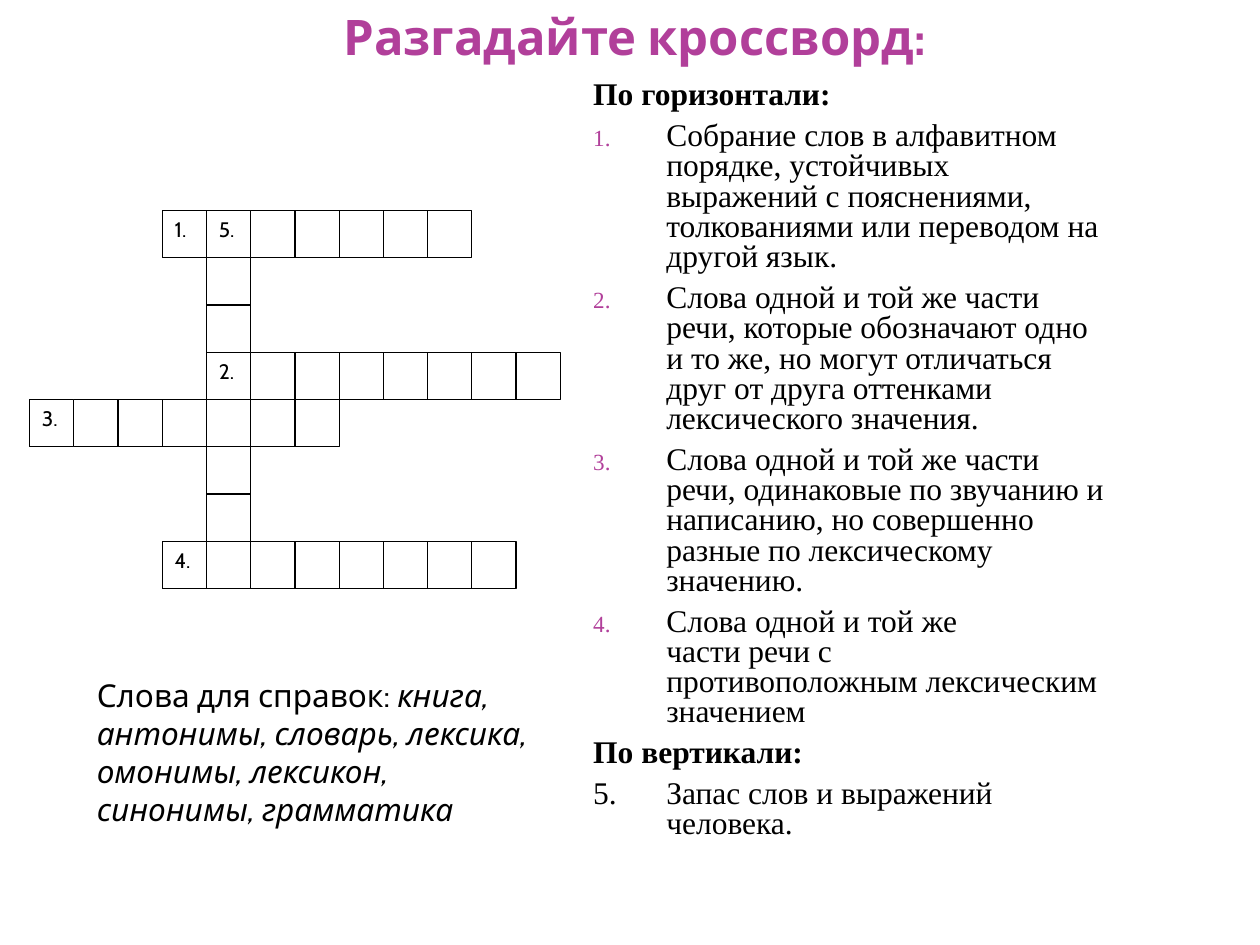
import pptx
import pptx.dml.color
import pptx.enum.shapes
import pptx.enum.text
import pptx.oxml
import pptx.oxml.ns
import pptx.util
from lxml import etree

THEME = {
    "accent": pptx.dml.color.RGBColor.from_string("B13F9A"),
    "ink": pptx.dml.color.RGBColor.from_string("000000"),
    "paper": pptx.dml.color.RGBColor.from_string("FFFFFF"),
    "sans": "Cabin",
    "serif": "Times New Roman",
    "title": 28,
    "text": 18,
    "number": 12,
    "line": 0.75,
}

presentation = pptx.Presentation()
presentation.slide_width = pptx.util.Inches(10)
presentation.slide_height = pptx.util.Inches(7.5)
slide = presentation.slides.add_slide(presentation.slide_layouts[5])

# Lengths are percentages of the slide's width and height
WIDTH = presentation.slide_width / 100
HEIGHT = presentation.slide_height / 100


def frame(left, top, width, height):
    return (round(left * WIDTH), round(top * HEIGHT),
            round(width * WIDTH), round(height * HEIGHT))


def add_run(paragraph, text, size, font, color="ink", bold=False, italic=False):
    run = paragraph.add_run()
    run.text = text
    run.font.size = pptx.util.Pt(THEME[size])
    run.font.name = THEME[font]
    run.font.color.rgb = THEME[color]
    run.font.bold = bold
    run.font.italic = italic


# Title
title = slide.shapes.title
title.left, title.top, title.width, title.height = frame(16.9, 0, 66.9, 7.6)
title.text_frame.vertical_anchor = pptx.enum.text.MSO_ANCHOR.TOP
title.text_frame.word_wrap = True
title.text_frame.auto_size = pptx.enum.text.MSO_AUTO_SIZE.NONE
title_paragraph = title.text_frame.paragraphs[0]
title_paragraph.alignment = pptx.enum.text.PP_ALIGN.CENTER
add_run(title_paragraph, "Разгадайте кроссворд:", "title", "sans", "accent", bold=True)

# Clues: text and kind
clues = [
    ("По горизонтали:", "heading"),
    ("Собрание слов в алфавитном порядке, устойчивых выражений с пояснениями, "
     "толкованиями или переводом на другой язык.", "numbered"),
    ("Слова одной и той же части речи, которые обозначают одно и то же, "
     "но могут отличаться друг от друга оттенками лексического значения.", "numbered"),
    ("Слова одной и той же части речи, одинаковые по звучанию и написанию, "
     "но совершенно разные по лексическому значению.", "numbered"),
    ("Слова одной и той же\nчасти речи с\nпротивоположным лексическим значением",
     "numbered"),
    ("По вертикали:", "heading"),
    ("5.\tЗапас слов и выражений человека.", "plain"),
]
clue_box = slide.shapes.add_textbox(*frame(46.1, 8, 42.5, 84))
clue_box.text_frame.word_wrap = True
for index, (text, kind) in enumerate(clues):
    paragraph = (clue_box.text_frame.add_paragraph() if index
                 else clue_box.text_frame.paragraphs[0])
    properties = paragraph._p.get_or_add_pPr()
    indent = round(5.8 * WIDTH)
    properties.set("marL", str(indent))
    properties.set("indent", str(-indent))
    if kind == "numbered":
        bullet_color = etree.SubElement(properties, pptx.oxml.ns.qn("a:buClr"))
        etree.SubElement(bullet_color, pptx.oxml.ns.qn("a:srgbClr"), val=str(THEME["accent"]))
        etree.SubElement(properties, pptx.oxml.ns.qn("a:buSzPct"), val="73000")
        etree.SubElement(properties, pptx.oxml.ns.qn("a:buAutoNum"), type="arabicPeriod")
    paragraph.line_spacing = 0.8
    paragraph.space_before = pptx.util.Pt(6 if index else 0)
    for number, line in enumerate(text.split("\n")):
        if number:
            paragraph.add_line_break()
        add_run(paragraph, line, "text", "serif", bold=kind == "heading")

# Words to choose from
word_box = slide.shapes.add_textbox(*frame(6.7, 70.9, 37.8, 17.5))
word_box.text_frame.word_wrap = True
word_paragraph = word_box.text_frame.paragraphs[0]
add_run(word_paragraph, "Слова для справок: ", "text", "sans")
add_run(word_paragraph, "книга, антонимы, словарь, лексика, омонимы, лексикон, "
        "синонимы, грамматика", "text", "sans", italic=True)

# Crossword bars: column, row, columns, rows; the vertical word lies underneath
LEFT, TOP, CELL_WIDTH, CELL_HEIGHT = 2.35, 22.27, 3.51, 5
bars = [(4, 0, 1, 8), (5, 3, 7, 1), (3, 0, 7, 1), (0, 4, 7, 1), (3, 7, 8, 1)]
numbers = [("1.", 3, 0), ("2.", 4, 3), ("3.", 0, 4), ("4.", 3, 7), ("5.", 4, 0)]
cells = [(column, row, 1, 1, text) for text, column, row in numbers]
crossword = slide.shapes.add_group_shape()

for column, row, columns, rows, text in [(*bar, "") for bar in bars] + cells:
    left, top = LEFT + column * CELL_WIDTH, TOP + row * CELL_HEIGHT
    width, height = columns * CELL_WIDTH, rows * CELL_HEIGHT
    shape = crossword.shapes.add_shape(
        pptx.enum.shapes.MSO_SHAPE.RECTANGLE, *frame(left, top, width, height))
    shape.shadow.inherit = False
    shape.fill.solid()
    shape.fill.fore_color.rgb = THEME["paper"]
    shape.line.color.rgb = THEME["ink"]
    shape.line.width = pptx.util.Pt(THEME["line"])

    # Clue number
    if text:
        shape.text_frame.margin_right = 0
        shape.text_frame.vertical_anchor = pptx.enum.text.MSO_ANCHOR.TOP
        paragraph = shape.text_frame.paragraphs[0]
        paragraph.alignment = pptx.enum.text.PP_ALIGN.LEFT
        add_run(paragraph, text, "number", "sans")

    # Dividers between the letters
    upright = rows == 1
    length = max(columns, rows)
    for step in range(1, length):
        if upright:
            x = left + step * CELL_WIDTH
            start, end, sites = (x, top), (x, top + height), (0, 2)
        else:
            y = top + step * CELL_HEIGHT
            start, end, sites = (left, y), (left + width, y), (1, 3)
        divider = crossword.shapes.add_connector(
            pptx.enum.shapes.MSO_CONNECTOR.STRAIGHT, *frame(*start, *end))
        if step * 2 == length:
            divider.begin_connect(shape, sites[0])
            divider.end_connect(shape, sites[1])
        divider.line.color.rgb = THEME["ink"]
        divider.line.width = pptx.util.Pt(THEME["line"])
        etree.SubElement(divider._element.spPr, pptx.oxml.ns.qn("a:effectLst"))

presentation.save("out.pptx")
